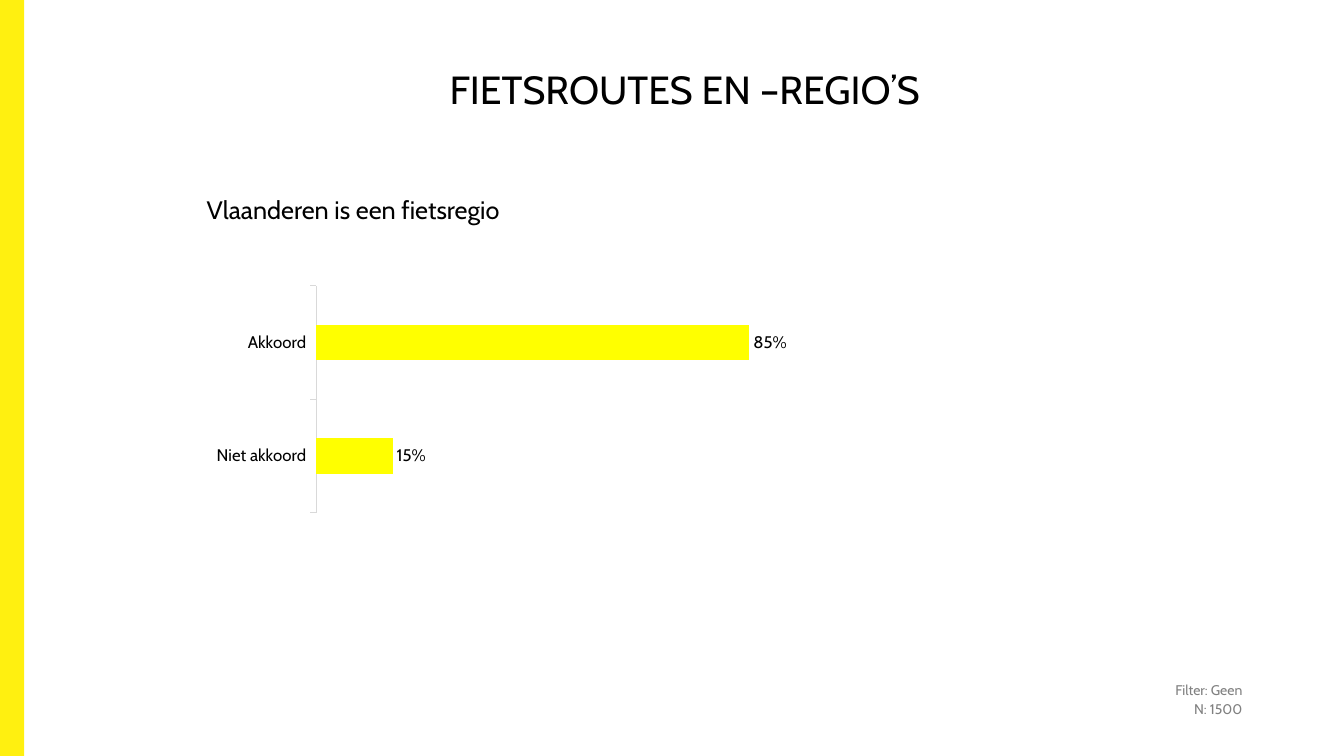
import pptx
import pptx.chart.data
import pptx.dml.color
import pptx.enum.chart
import pptx.enum.shapes
import pptx.enum.text
import pptx.oxml
import pptx.util
from pptx.util import Inches

FONT = "Cabin"
COLORS = {
    "text": "000000",
    "note": "808080",
    "band": "FFF010",
    "bar": "FFFF00",
    "axis": "D9D9D9",
}
ALIGN = pptx.enum.text.PP_ALIGN


def color(name):
    return pptx.dml.color.RGBColor.from_string(COLORS[name])


def style_font(font, size, color_name="text"):
    font.name = FONT
    font.size = pptx.util.Pt(size)
    font.bold = False
    font.color.rgb = color(color_name)


def place(shape, left, top, width, height):
    shape.left, shape.top = Inches(left), Inches(top)
    shape.width, shape.height = Inches(width), Inches(height)


def write(shape, text, size, align, color_name="text", gap=0):
    """Fill a text shape, one paragraph per line of text."""
    frame = shape.text_frame
    frame.text = text
    frame.word_wrap = True
    frame.auto_size = pptx.enum.text.MSO_AUTO_SIZE.NONE
    frame.vertical_anchor = pptx.enum.text.MSO_ANCHOR.TOP
    for index, paragraph in enumerate(frame.paragraphs):
        paragraph.alignment = align
        paragraph.space_before = pptx.util.Pt(gap if index else 0)
        for run in paragraph.runs:
            style_font(run.font, size, color_name)


def remove_bullet(paragraph):
    properties = paragraph._p.get_or_add_pPr()
    properties.set("marL", "0")
    properties.set("indent", "0")
    properties.append(pptx.oxml.parse_xml(
        '<a:buNone xmlns:a="http://schemas.openxmlformats.org/drawingml/2006/main"/>'))


def add_band(slide):
    band = slide.shapes.add_shape(
        pptx.enum.shapes.MSO_SHAPE.RECTANGLE,
        Inches(0), Inches(0), Inches(0.24), Inches(7.5))
    band.shadow.inherit = False
    band.fill.solid()
    band.fill.fore_color.rgb = color("band")
    band.line.fill.background()


def set_plot_area(chart, x, y, width, height):
    """Fix the inner plot area as fractions of the chart."""
    parts = "".join(
        f'<c:{tag} val="{value}"/>' for tag, value in (
            ("layoutTarget", "inner"), ("xMode", "edge"), ("yMode", "edge"),
            ("x", x), ("y", y), ("w", width), ("h", height)))
    layout = pptx.oxml.parse_xml(
        '<c:layout xmlns:c="http://schemas.openxmlformats.org/drawingml/2006/chart">'
        f"<c:manualLayout>{parts}</c:manualLayout></c:layout>")
    plot_area = chart._chartSpace.chart.plotArea
    for old_layout in plot_area.findall(layout.tag):
        plot_area.remove(old_layout)
    plot_area.insert(0, layout)


def add_agreement_chart(slide):
    answers = pptx.chart.data.CategoryChartData(number_format="###0%")
    answers.categories = ["Akkoord", "Niet akkoord"]
    answers.add_series("Series 1", [0.85, 0.15])
    chart = slide.shapes.add_chart(
        pptx.enum.chart.XL_CHART_TYPE.BAR_CLUSTERED,
        Inches(-0.3), Inches(2.83), Inches(10.11), Inches(2.51), answers).chart
    chart.has_legend = False
    chart.has_title = False
    style_font(chart.font, 12)
    set_plot_area(chart, 0.34, 0, 0.5, 0.9)

    # Axes
    answer_axis = chart.category_axis
    answer_axis.reverse_order = True
    answer_axis.has_major_gridlines = False
    answer_axis.major_tick_mark = pptx.enum.chart.XL_TICK_MARK.OUTSIDE
    answer_axis.format.line.color.rgb = color("axis")
    answer_axis.format.line.width = pptx.util.Pt(0.75)
    style_font(answer_axis.tick_labels.font, 12)
    share_axis = chart.value_axis
    share_axis.minimum_scale = 0
    share_axis.maximum_scale = 1
    share_axis.has_major_gridlines = False
    share_axis.visible = False

    # Bars and their labels
    plot = chart.plots[0]
    plot.gap_width = 219
    plot.vary_by_categories = False
    bars = plot.series[0]
    bars.format.fill.solid()
    bars.format.fill.fore_color.rgb = color("bar")
    labels = bars.data_labels
    labels.show_value = True
    labels.number_format = "###0%"
    labels.number_format_is_linked = False
    labels.position = pptx.enum.chart.XL_LABEL_POSITION.OUTSIDE_END
    style_font(labels.font, 12)


def main():
    presentation = pptx.Presentation()
    presentation.slide_width = Inches(13.33)
    presentation.slide_height = Inches(7.5)
    slide = presentation.slides.add_slide(presentation.slide_layouts[1])
    add_band(slide)

    # Heading and statement
    heading = slide.shapes.title
    place(heading, 0.24, 0.6, 13.1, 1.25)
    write(heading, "FIETSROUTES EN –REGIO’S", 28, ALIGN.CENTER)
    statement = slide.placeholders[1]
    place(statement, 1.95, 1.88, 11.2, 0.7)
    write(statement, "Vlaanderen is een fietsregio", 18, ALIGN.LEFT)
    remove_bullet(statement.text_frame.paragraphs[0])

    add_agreement_chart(slide)

    # Sample note
    sample = slide.shapes.add_textbox(
        Inches(8.61), Inches(6.71), Inches(3.81), Inches(0.53))
    write(sample, "Filter: Geen\nN: 1500", 10, ALIGN.RIGHT, "note", gap=2)

    presentation.save("out.pptx")


if __name__ == "__main__":
    main()
